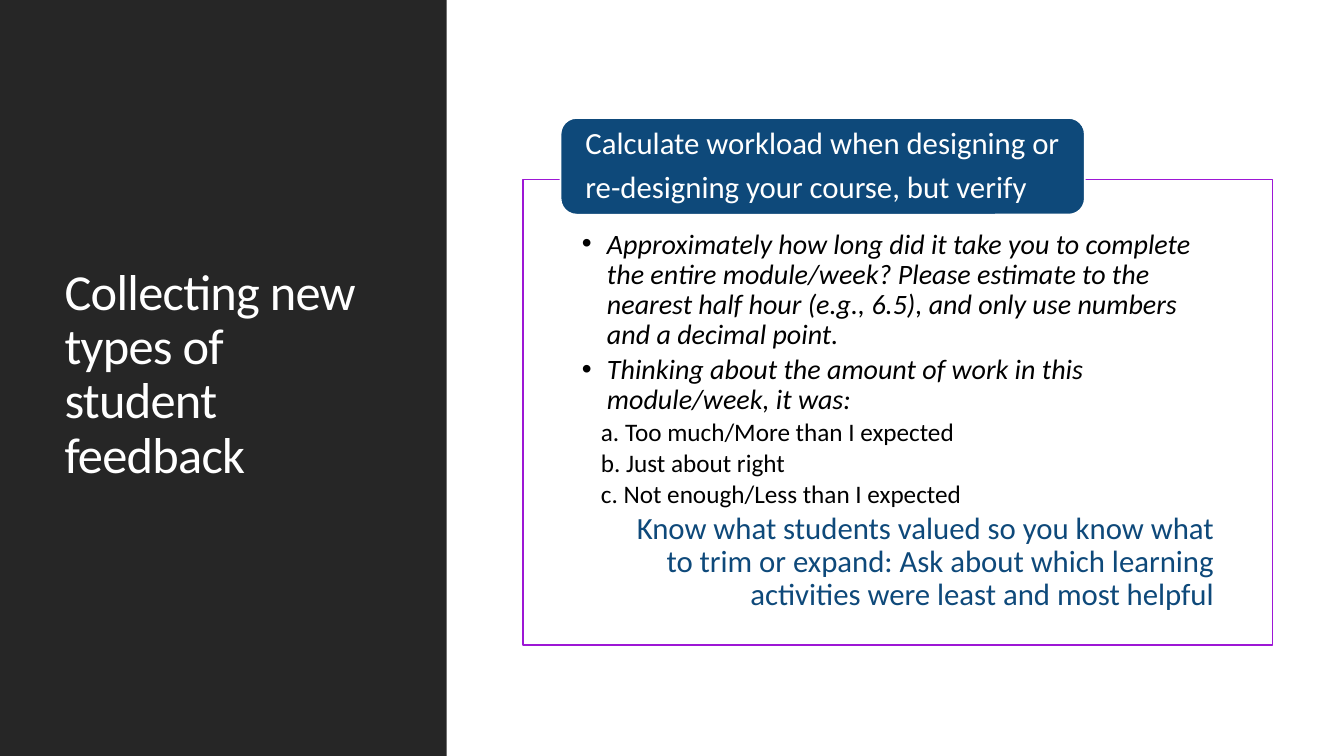
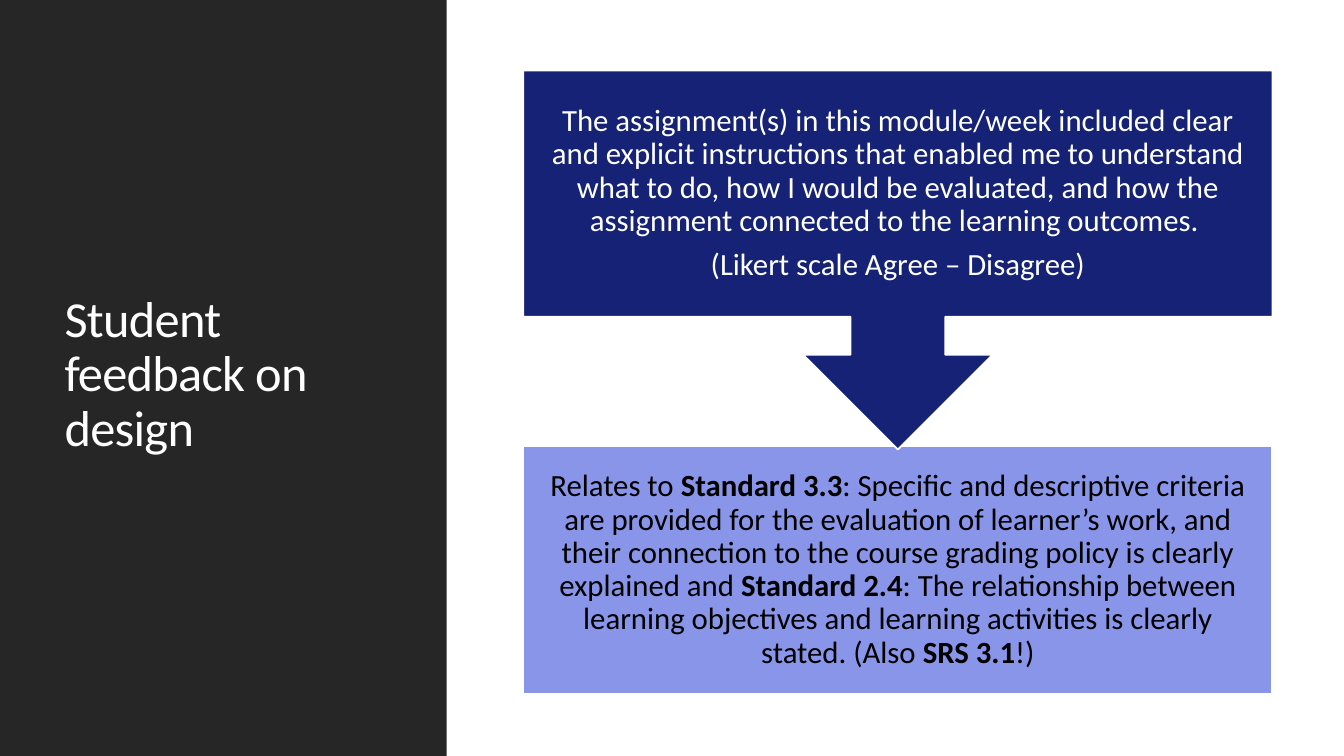
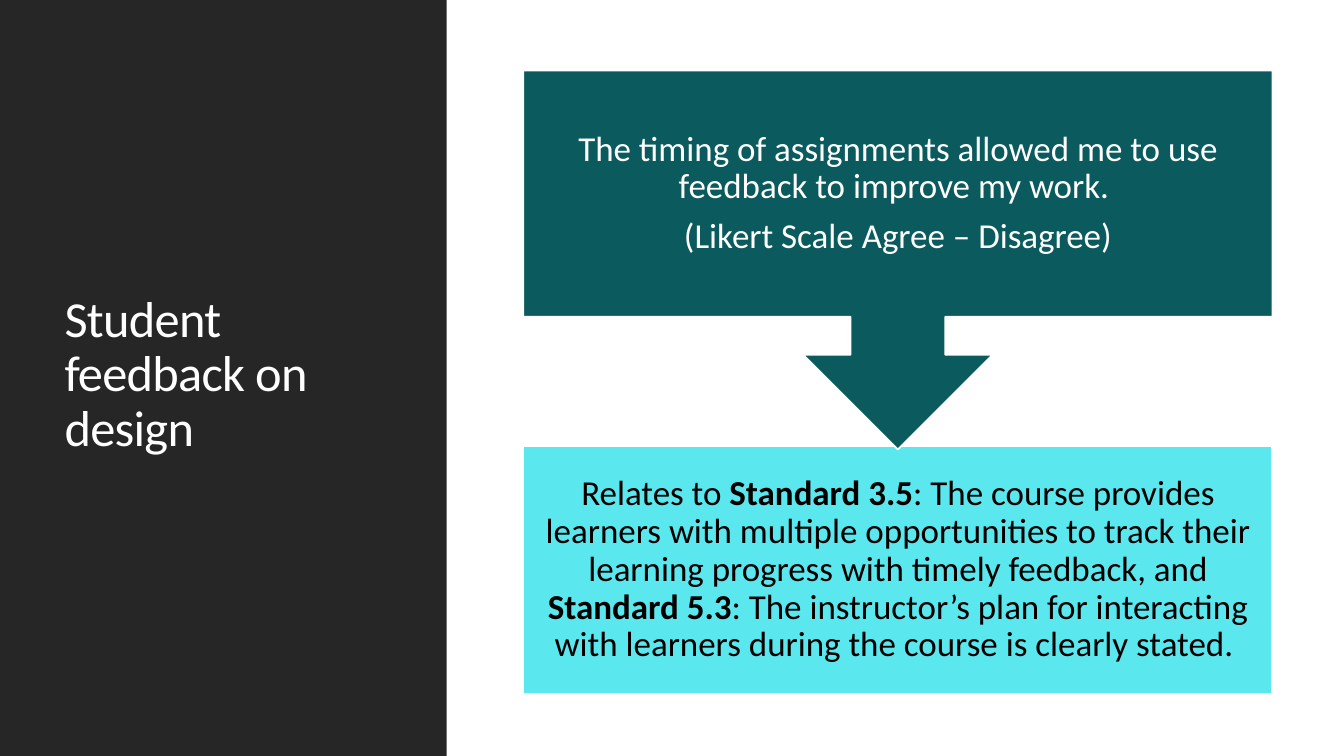
from lxml import etree
from pptx import Presentation
from pptx.dml.color import RGBColor
from pptx.enum.shapes import MSO_SHAPE
from pptx.enum.text import MSO_ANCHOR, MSO_AUTO_SIZE, PP_ALIGN
from pptx.oxml.ns import qn
from pptx.util import Pt

RECT = MSO_SHAPE.RECTANGLE
ROUNDED = MSO_SHAPE.ROUNDED_RECTANGLE
CALLOUT = MSO_SHAPE.DOWN_ARROW_CALLOUT
LEFT, CENTER, RIGHT = PP_ALIGN.LEFT, PP_ALIGN.CENTER, PP_ALIGN.RIGHT
TOP, MIDDLE = MSO_ANCHOR.TOP, MSO_ANCHOR.MIDDLE

PX = 9144  # 100 px to the inch
FONT = "Calibri"
WHITE, BLACK, CHARCOAL = "FFFFFF", "000000", "262626"
BLUE, PURPLE = "0E497A", "9D17D5"

SLIDE_SIZE = (1333, 750)
PANEL = (0, 0, 443, 750)
TITLE = (54, 57, 337, 631)
CONTENT_LEFT, CONTENT_WIDTH = 519, 743
QUESTIONS = (CONTENT_LEFT, 178, CONTENT_WIDTH, 462)
HEADING = (556, 117, 520, 96)
STATEMENT = (CONTENT_LEFT, 70, CONTENT_WIDTH, 376)
STANDARD = (CONTENT_LEFT, 443, CONTENT_WIDTH, 245)

WORKLOAD_TITLE = "Collecting new types of student feedback"
WORKLOAD_HEADING = ["Calculate workload when designing or",
                    "re-designing your course, but verify"]

# level: size, colour, italic, alignment, left margin, first-line indent, bullet
LEVELS = [
    (20, BLACK, True, LEFT, 25, -25, True),
    (18, BLACK, False, LEFT, 38, -19, False),
    (22, BLUE, False, RIGHT, 75, -25, False),
]
WORKLOAD_QUESTIONS = [
    (0, "Approximately how long did it take you to complete the entire module/week? "
        "Please estimate to the nearest half hour (e.g., 6.5), and only use numbers "
        "and a decimal point."),
    (0, "Thinking about the amount of work in this module/week, it was:"),
    (1, "a. Too much/More than I expected"),
    (1, "b. Just about right"),
    (1, "c. Not enough/Less than I expected"),
    (2, "Know what students valued so you know what to trim or expand: Ask about which "
        "learning activities were least and most helpful"),
]

DESIGN_TITLE = "Student feedback on design"
# Text between ** marks is bold.
DESIGN_SLIDES = [
    {"size": 22, "inset": 17, "dark": "152275", "light": "8895E9",
     "statement": [
         "The assignment(s) in this module/week included clear and explicit instructions "
         "that enabled me to understand what to do, how I would be evaluated, and how the "
         "assignment connected to the learning outcomes. ",
         "(Likert scale Agree – Disagree)"],
     "standard": [
         "Relates to **Standard 3.3**: Specific and descriptive criteria are provided for "
         "the evaluation of learner’s work, and their connection to the course grading "
         "policy is clearly explained and **Standard 2.4**: The relationship between "
         "learning objectives and learning activities is clearly stated. "
         "(Also **SRS 3.1**!)"]},
    {"size": 25, "inset": 19, "dark": "0A5A5E", "light": "5BE7EE",
     "statement": [
         "The timing of assignments allowed me to use feedback to improve my work. ",
         "(Likert Scale Agree – Disagree)"],
     "standard": [
         "Relates to **Standard 3.5**: The course provides learners with multiple "
         "opportunities to track their learning progress with timely feedback, and "
         "**Standard 5.3**: The instructor’s plan for interacting with learners during "
         "the course is clearly stated. "]},
]


def rgb(color):
    return RGBColor.from_string(color)


def place(shape, box):
    shape.left, shape.top, shape.width, shape.height = (v * PX for v in box)


def paint(shape, fill, line=None):
    shape.fill.solid()
    shape.fill.fore_color.rgb = rgb(fill)
    if line:
        shape.line.color.rgb = rgb(line)
        shape.line.width = Pt(1.25)
    else:
        shape.line.fill.background()


def add_box(slide, kind, box, fill, line=None):
    shape = slide.shapes.add_shape(kind, *(v * PX for v in box))
    shape.shadow.inherit = False
    paint(shape, fill, line)
    return shape


def set_frame(frame, anchor, insets):
    frame.word_wrap = True
    frame.auto_size = MSO_AUTO_SIZE.NONE
    frame.vertical_anchor = anchor
    (frame.margin_left, frame.margin_top,
     frame.margin_right, frame.margin_bottom) = (v * PX for v in insets)


def write(paragraph, text, size, color, align, gap=0, italic=False):
    """Fill a paragraph; gap is the space after it as a share of the text size."""
    paragraph.alignment = align
    paragraph.line_spacing = 0.9
    paragraph.space_before = Pt(0)
    paragraph.space_after = Pt(size * gap)
    for i, part in enumerate(text.split("**")):
        run = paragraph.add_run()
        run.text = part
        run.font.name, run.font.size = FONT, Pt(size)
        run.font.bold, run.font.italic = i % 2 == 1, italic
        run.font.color.rgb = rgb(color)


def paragraphs(frame, count):
    return [frame.paragraphs[0]] + [frame.add_paragraph() for _ in range(count - 1)]


def write_all(frame, texts, size, color, align):
    for paragraph, text in zip(paragraphs(frame, len(texts)), texts):
        write(paragraph, text, size, color, align, gap=0.35)


def new_slide(prs, layout, title_text):
    """Add a slide with the dark side panel and its title."""
    slide = prs.slides.add_slide(prs.slide_layouts[layout])
    panel = add_box(slide, RECT, PANEL, CHARCOAL).element
    panel.getparent().insert(2, panel)  # behind the title
    title = slide.shapes.title
    place(title, TITLE)
    set_frame(title.text_frame, MIDDLE, (10, 5, 10, 5))
    heading = title.text_frame.paragraphs[0]
    write(heading, title_text, 36, WHITE, LEFT)
    heading.runs[0].font._element.set("spc", "-50")
    return slide


def add_workload_slide(prs):
    slide = new_slide(prs, 1, WORKLOAD_TITLE)
    questions = slide.placeholders[1]
    place(questions, QUESTIONS)
    paint(questions, WHITE, PURPLE)
    frame = questions.text_frame
    set_frame(frame, TOP, (58, 50, 58, 16))
    rows = paragraphs(frame, len(WORKLOAD_QUESTIONS))
    for paragraph, (level, text) in zip(rows, WORKLOAD_QUESTIONS):
        size, color, italic, align, margin, indent, bullet = LEVELS[level]
        paragraph.level = level
        write(paragraph, text, size, color, align, 0.15, italic)
        props = paragraph._p.get_or_add_pPr()
        props.set("marL", str(margin * PX))
        props.set("indent", str(indent * PX))
        if not bullet:
            etree.SubElement(props, qn("a:buNone"))

    heading = add_box(slide, ROUNDED, HEADING, BLUE, WHITE)
    set_frame(heading.text_frame, MIDDLE, (20, 0, 20, 0))
    write_all(heading.text_frame, WORKLOAD_HEADING, 22, WHITE, LEFT)


def add_design_slide(prs, content):
    slide = new_slide(prs, 5, DESIGN_TITLE)
    for kind, box, fill, color, part in (
            (RECT, STANDARD, content["light"], BLACK, "standard"),
            (CALLOUT, STATEMENT, content["dark"], WHITE, "statement")):
        frame = add_box(slide, kind, box, fill, WHITE).text_frame
        set_frame(frame, MIDDLE, [content["inset"]] * 4)
        write_all(frame, content[part], content["size"], color, CENTER)


def main():
    prs = Presentation()
    prs.slide_width, prs.slide_height = (v * PX for v in SLIDE_SIZE)
    add_workload_slide(prs)
    for content in DESIGN_SLIDES:
        add_design_slide(prs, content)
    prs.save("out.pptx")


if __name__ == "__main__":
    main()
